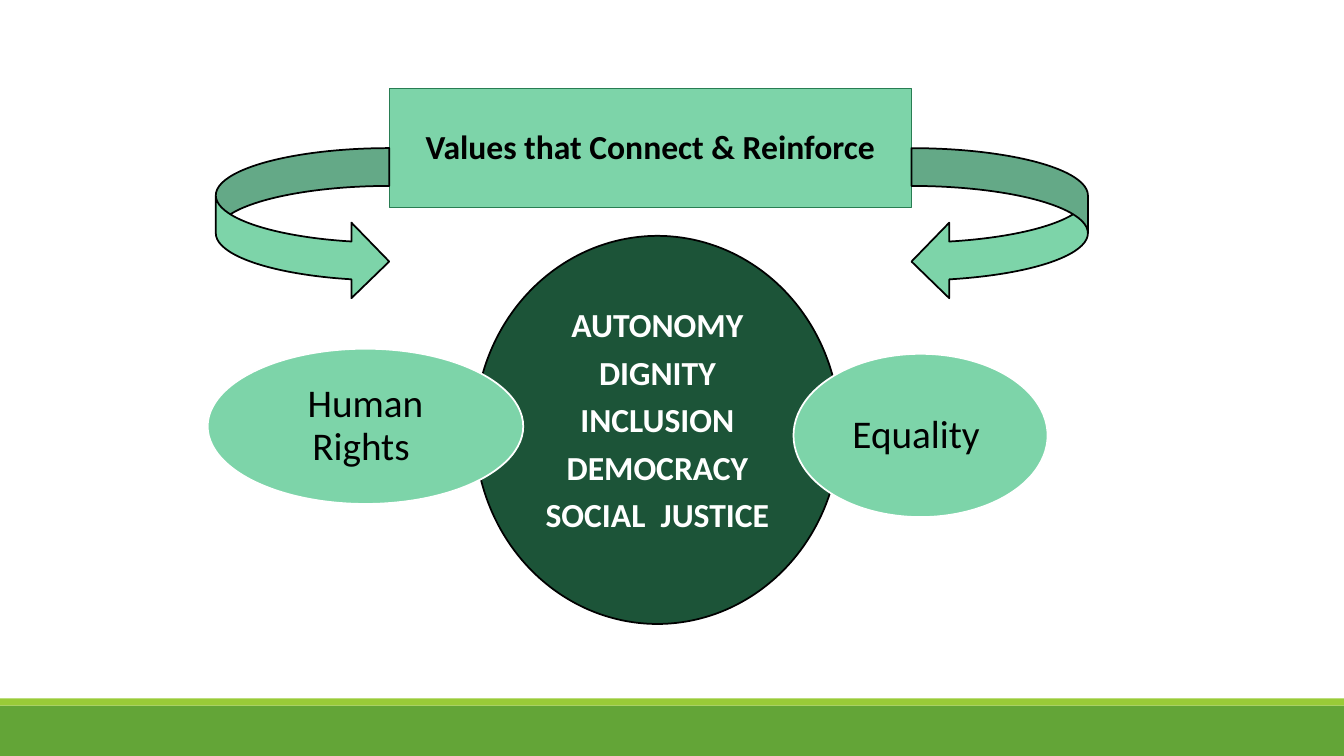
from pptx import Presentation
from pptx.dml.color import RGBColor
from pptx.enum.shapes import MSO_SHAPE as Shape
from pptx.enum.text import MSO_ANCHOR as Anchor, PP_ALIGN as Align
from pptx.util import Inches, Pt

BLACK = RGBColor(0x00, 0x00, 0x00)
WHITE = RGBColor(0xFF, 0xFF, 0xFF)
MINT = RGBColor(0x7D, 0xD4, 0xA9)
FOREST = RGBColor(0x1C, 0x54, 0x38)
EDGE = RGBColor(0x29, 0x7D, 0x53)
GRASS = RGBColor(0x63, 0xA5, 0x37)
LIME = RGBColor(0x99, 0xCB, 0x38)

deck = Presentation()
deck.slide_width = Inches(13.33)
deck.slide_height = Inches(7.5)
slide = deck.slides.add_slide(deck.slide_layouts[6])


def draw(kind, box, fill, line=None, width=1.25):
    shape = slide.shapes.add_shape(kind, *map(Inches, box))
    shape.shadow.inherit = False
    shape.fill.solid()
    shape.fill.fore_color.rgb = fill
    if line is None:
        shape.line.fill.background()
    else:
        shape.line.color.rgb = line
        shape.line.width = Pt(width)
    return shape


def write(shape, lines, color, size, bold=False, inset=0.1, low=0):
    frame = shape.text_frame
    form = {
        "word_wrap": True,
        "vertical_anchor": Anchor.MIDDLE,
        "margin_left": Inches(inset),
        "margin_right": Inches(inset),
        "margin_top": 0,
        "margin_bottom": Inches(low),
    }
    for key, value in form.items():
        setattr(frame, key, value)
    frame.text = "\n".join(lines)
    style = {"name": "Calibri", "size": Pt(size), "bold": bold}
    for para in frame.paragraphs:
        para.alignment = Align.CENTER
        para.line_spacing = 0.9
        para.space_after = Pt(8)
        font = para.runs[0].font
        for key, value in style.items():
            setattr(font, key, value)
        font.color.rgb = color


draw(Shape.RECTANGLE, (0, 7, 13.33, 0.5), GRASS)
draw(Shape.RECTANGLE, (0, 6.93, 13.33, 0.07), LIME)

core = draw(Shape.OVAL, (4.71, 2.34, 3.62, 3.85), FOREST, BLACK)
values = ["AUTONOMY", "DIGNITY", "INCLUSION", "DEMOCRACY", "SOCIAL  JUSTICE"]
write(core, values, WHITE, 24, bold=True, inset=0.01, low=0.16)

sides = [
    ("Human Rights ", (2.06, 3.46, 3.13, 1.54)),
    ("Equality ", (7.87, 3.51, 2.52, 1.62)),
]
for name, box in sides:
    oval = draw(Shape.OVAL, box, MINT, WHITE)
    write(oval, [name], BLACK, 28)

banner = draw(Shape.RECTANGLE, (3.86, 0.88, 5.18, 1.18), MINT, EDGE, 0.5)
write(banner, ["Values that Connect & Reinforce"], BLACK, 24, bold=True)

arrows = [
    (Shape.CURVED_RIGHT_ARROW, 2.14, 1.72),
    (Shape.CURVED_LEFT_ARROW, 9.04, 1.75),
]
for kind, left, width in arrows:
    draw(kind, (left, 1.47, width, 1.5), MINT, BLACK)

deck.save("out.pptx")
